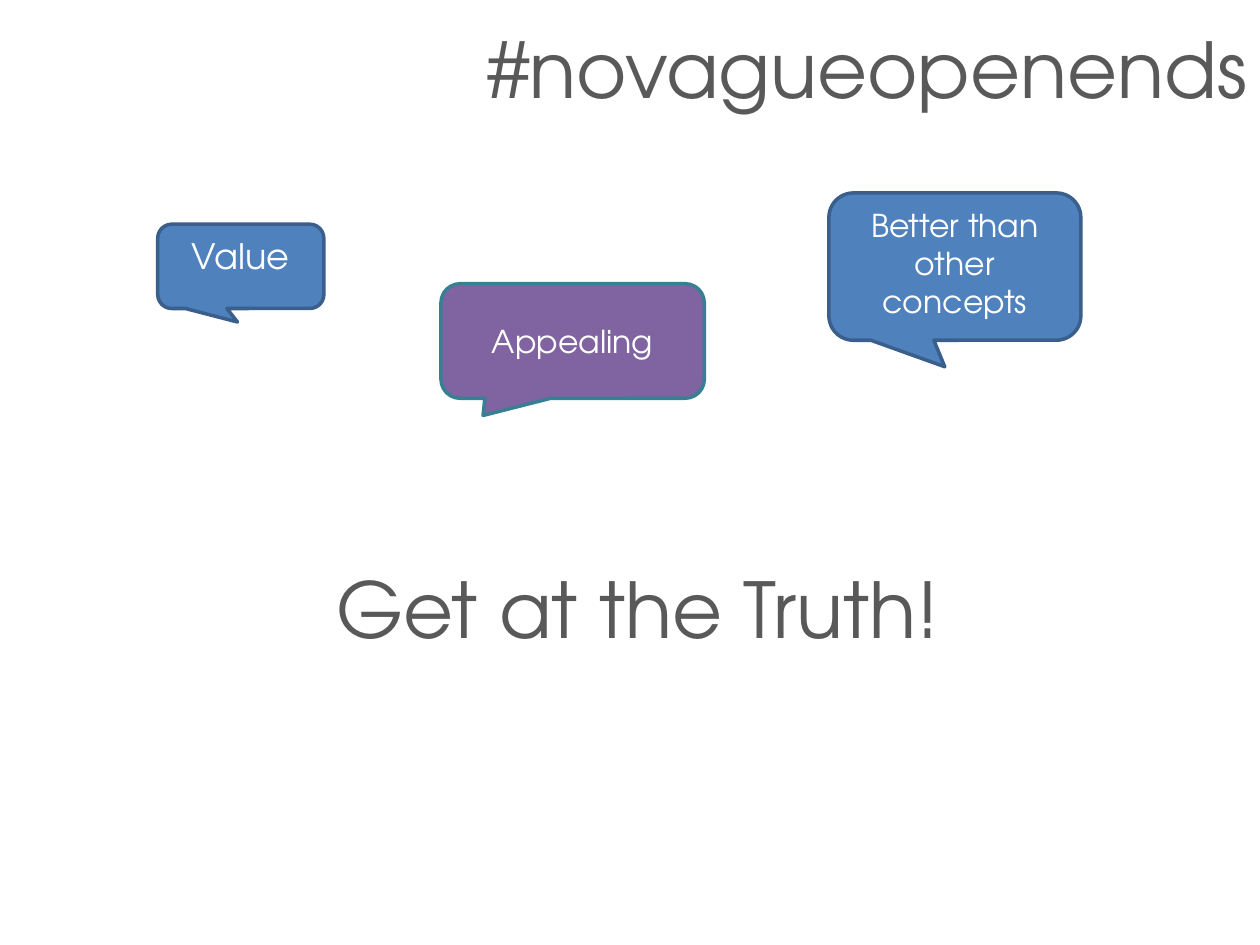
from pptx import Presentation
from pptx.dml.color import RGBColor
from pptx.enum.shapes import MSO_SHAPE as SHAPE
from pptx.enum.text import MSO_ANCHOR as ANCHOR, PP_ALIGN as ALIGN
from pptx.util import Cm, Pt

FONT = "TeX Gyre Adventor"
GREY = RGBColor(0x59, 0x59, 0x59)
WHITE = RGBColor(0xFF, 0xFF, 0xFF)
BLUE = RGBColor(0x4F, 0x81, 0xBD)
DARK_BLUE = RGBColor(0x3A, 0x5F, 0x8C)
PURPLE = RGBColor(0x80, 0x64, 0xA2)
TEAL = RGBColor(0x37, 0x7F, 0x92)


def write(sp, text, size, color, align, anchor):
    tf = sp.text_frame
    tf.word_wrap = True
    tf.vertical_anchor = anchor
    p = tf.paragraphs[0]
    p.alignment = align
    r = p.add_run()
    r.text = text
    r.font.name = FONT
    r.font.size = Pt(size)
    r.font.color.rgb = color


def add_heading(s, text, box, align, anchor):
    sp = s.shapes.add_textbox(*map(Cm, box))
    write(sp, text, 44, GREY, align, anchor)


def add_callout(s, text, box, tail, size, fill, line, anchor):
    sp = s.shapes.add_shape(SHAPE.ROUNDED_RECTANGULAR_CALLOUT, *map(Cm, box))
    sp.shadow.inherit = False
    # Tail tip as a share of the size, measured from the centre
    sp.adjustments[0], sp.adjustments[1] = tail
    sp.fill.solid()
    sp.fill.fore_color.rgb = fill
    sp.line.color.rgb = line
    sp.line.width = Pt(2)
    write(sp, text, size, WHITE, ALIGN.CENTER, anchor)


def main():
    prs = Presentation()
    prs.slide_width, prs.slide_height = Cm(25.4), Cm(19.05)
    s = prs.slides.add_slide(prs.slide_layouts[6])

    # Title
    add_heading(s, "#novagueopenends", (5.08, 0, 20.32, 2.74),
                ALIGN.RIGHT, ANCHOR.MIDDLE)

    # Speech bubbles
    add_callout(s, "Value", (3.18, 4.52, 3.35, 1.7), (-0.02, 0.66),
                20, BLUE, DARK_BLUE, ANCHOR.TOP)
    add_callout(s, "Appealing", (8.89, 5.72, 5.31, 2.31), (-0.34, 0.65),
                18, PURPLE, TEAL, ANCHOR.MIDDLE)
    add_callout(s, "Better than other concepts", (16.71, 3.89, 5.08, 2.97),
                (-0.04, 0.68), 18, BLUE, DARK_BLUE, ANCHOR.TOP)

    # Closing message
    add_heading(s, "Get at the Truth!", (6.53, 11.2, 17.78, 2.13),
                ALIGN.LEFT, ANCHOR.TOP)

    prs.save("out.pptx")


if __name__ == "__main__":
    main()
